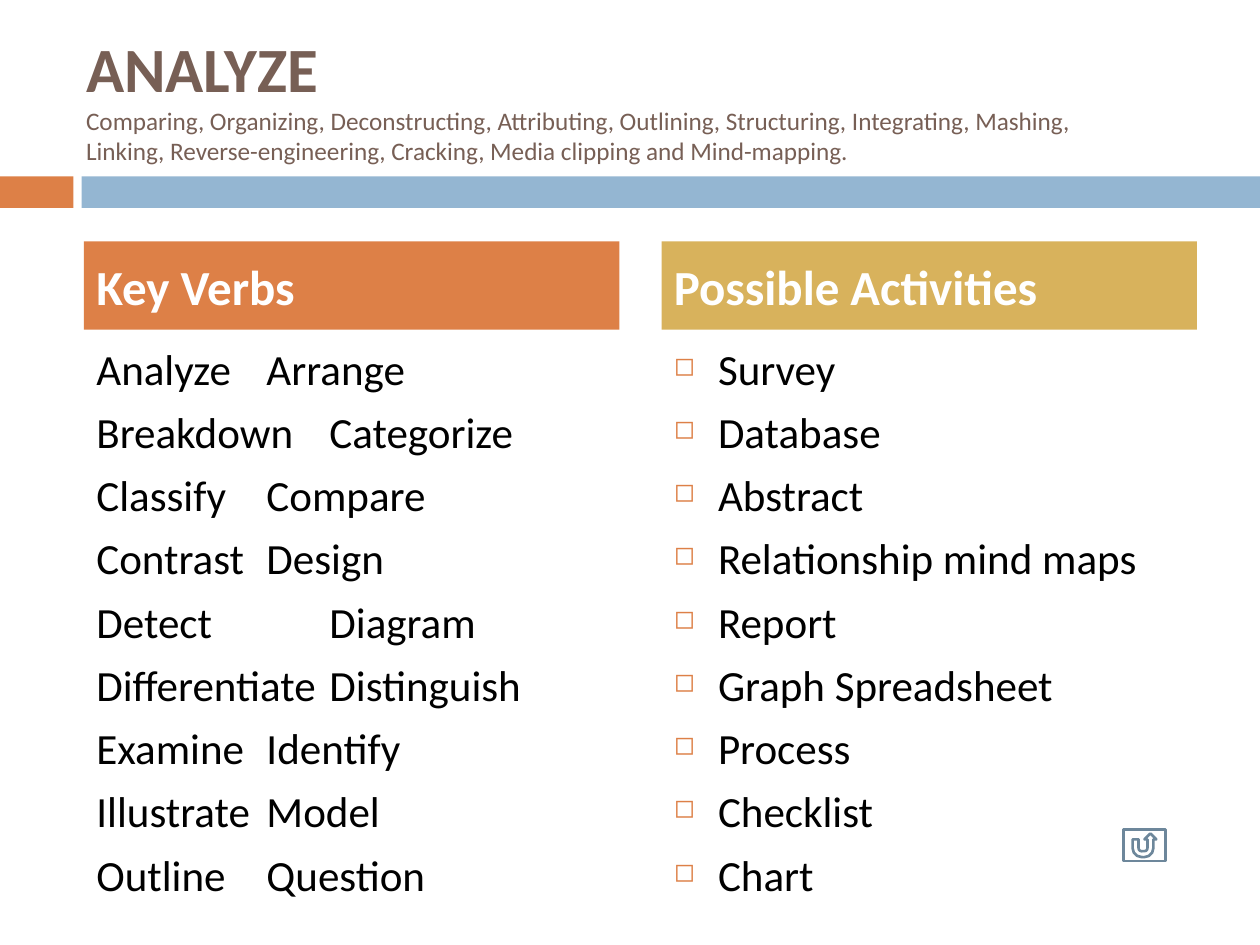
from lxml.etree import SubElement
from pptx import Presentation
from pptx.dml.color import RGBColor
from pptx.enum.shapes import MSO_SHAPE as Shape
from pptx.enum.text import MSO_ANCHOR as Anchor, MSO_AUTO_SIZE as AutoSize, PP_ALIGN as Align
from pptx.oxml.ns import qn
from pptx.util import Pt

FONT = "Calibri"
ORANGE, BLUE, GOLD = "DD8047", "94B6D2", "D8B25C"
COLUMN_WIDTH = 306
INDENT = 25.2
VERBS = [
    "Analyze \tArrange",
    "Breakdown \tCategorize",
    "Classify \tCompare",
    "Contrast \tDesign",
    "Detect\t \tDiagram",
    "Differentiate \tDistinguish",
    "Examine \tIdentify",
    "Illustrate \tModel\t",
    "Outline \tQuestion",
]
ACTIVITIES = [
    "Survey", "Database", "Abstract", "Relationship mind maps", "Report",
    "Graph Spreadsheet", "Process", "Checklist", "Chart",
]
COLUMNS = [
    (48, "Key Verbs", ORANGE, VERBS, False),
    (378, "Possible Activities", GOLD, ACTIVITIES, True),
]


def color(value):
    return RGBColor.from_string(value)


def set_font(font, size, value, bold=False):
    font.name = FONT
    font.size = Pt(size)
    font.bold = bold
    font.color.rgb = color(value)


def add_bar(slide, left, top, width, height, fill):
    shape = slide.shapes.add_shape(Shape.RECTANGLE, Pt(left), Pt(top), Pt(width), Pt(height))
    shape.shadow.inherit = False
    shape.fill.solid()
    shape.fill.fore_color.rgb = color(fill)
    shape.line.fill.background()
    return shape


def add_title(slide, heading, lines):
    title = slide.shapes.title
    title.left, title.top, title.width, title.height = Pt(42), Pt(21.6), Pt(642), Pt(68.4)
    frame = title.text_frame
    frame.auto_size = AutoSize.NONE
    frame.vertical_anchor = Anchor.MIDDLE
    paragraph = frame.paragraphs[0]
    paragraph.alignment = Align.LEFT
    run = paragraph.add_run()
    run.text = heading
    set_font(run.font, 36, "775F55", True)
    for line in lines:
        paragraph.add_line_break()
        run = paragraph.add_run()
        run.text = line
        set_font(run.font, 14.4, "775F55")


def add_header(slide, left, text, fill):
    shape = add_bar(slide, left, 138, COLUMN_WIDTH, 50.4, fill)
    shape.text_frame.vertical_anchor = Anchor.MIDDLE
    paragraph = shape.text_frame.paragraphs[0]
    paragraph.text = text
    paragraph.alignment = Align.LEFT
    paragraph.space_before = Pt(7)
    set_font(paragraph.font, 28, "FFFFFF", True)


def format_indent(paragraph, bulleted):
    properties = paragraph._p.get_or_add_pPr()
    properties.set("marL", str(Pt(INDENT)))
    properties.set("indent", str(-Pt(INDENT)))
    if bulleted:
        bullet_color = SubElement(properties, qn("a:buClr"))
        SubElement(bullet_color, qn("a:srgbClr"), val=ORANGE)
        SubElement(properties, qn("a:buSzPct"), val="60000")
        SubElement(properties, qn("a:buChar"), char="◻")


def add_list(slide, left, items, bulleted):
    box = slide.shapes.add_textbox(Pt(left), Pt(192), Pt(COLUMN_WIDTH), Pt(282))
    frame = box.text_frame
    frame.word_wrap = True
    for index, item in enumerate(items):
        paragraph = frame.add_paragraph() if index else frame.paragraphs[0]
        paragraph.text = item
        paragraph.space_before = Pt(6.6)
        format_indent(paragraph, bulleted)
        set_font(paragraph.font, 24.6, "000000")


def add_return_button(slide):
    button = slide.shapes.add_shape(
        Shape.ACTION_BUTTON_RETURN, Pt(642), Pt(474), Pt(24), Pt(18))
    button.shadow.inherit = False
    button.fill.background()
    button.line.color.rgb = color("6D879B")
    button.line.width = Pt(1.5)


def main():
    presentation = Presentation()
    presentation.slide_width, presentation.slide_height = Pt(720), Pt(540)
    slide = presentation.slides.add_slide(presentation.slide_layouts[5])
    add_bar(slide, 0, 100.8, 42, 18, ORANGE)
    add_bar(slide, 46.6, 100.8, 673.4, 18, BLUE)
    add_title(slide, "ANALYZE", [
        "Comparing, Organizing, Deconstructing, Attributing, Outlining, "
        "Structuring, Integrating, Mashing,",
        "Linking, Reverse-engineering, Cracking, Media clipping and Mind-mapping.",
    ])
    for left, header, fill, items, bulleted in COLUMNS:
        add_list(slide, left, items, bulleted)
        add_header(slide, left, header, fill)
    add_return_button(slide)
    presentation.save("out.pptx")


if __name__ == "__main__":
    main()
